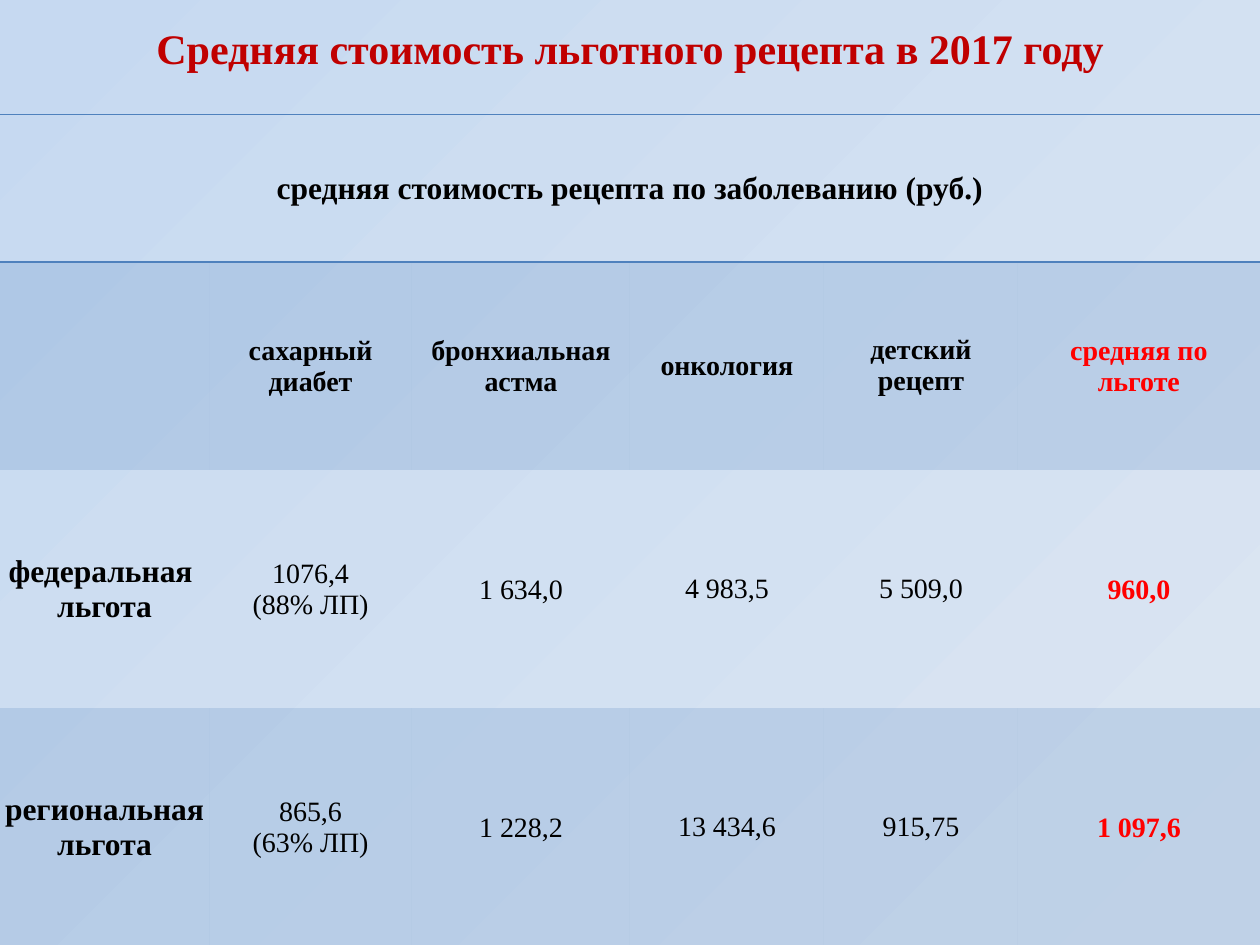
from dataclasses import dataclass

from lxml import etree
from pptx import Presentation
from pptx.dml.color import RGBColor
from pptx.enum import text
from pptx.oxml import ns
from pptx.util import Inches, Pt


@dataclass(frozen=True)
class Theme:
    font: str = "Times New Roman"
    title: str = "C00000"
    body: str = "000000"
    accent: str = "FF0000"
    band: str = "4F81BD"
    glow: str = "DCE6F2"
    backdrop: str = "C6D9F1"
    title_size: int = 24
    label_size: int = 18
    cell_size: int = 16


THEME = Theme()
NO_STYLE = "{2D5ABB26-0587-4C30-8999-92F81FD0307C}"
COLUMN_WIDTHS = (1.66, 1.61, 1.73, 1.54, 1.54, 1.92)
ROW_HEIGHTS = (1.17, 1.65, 1.89, 1.89)
ROWS = (
    ("средняя стоимость рецепта по заболеванию (руб.)", "", "", "", "", ""),
    ("", "сахарный диабет", "бронхиальная астма", "онкология",
     "детский рецепт", "средняя по\nльготе"),
    ("федеральная \nльгота", "1076,4\n(88% ЛП)", "1 634,0", "4 983,5",
     "5 509,0", "960,0"),
    ("региональная льгота", "865,6\n(63% ЛП)", "1 228,2", "13 434,6",
     "915,75", "1 097,6"),
)
WIDE_MARGIN_COLUMNS = (3, 4)


def add_element(parent, tag, **attributes):
    return etree.SubElement(parent, ns.qn(tag), attributes)


def set_alpha(color_element, percent):
    add_element(color_element, "a:alpha", val=str(percent * 1000))


def paint_background(slide):
    fill = slide.background.fill
    fill.gradient()
    for stop, color, position in zip(fill.gradient_stops,
                                     (THEME.glow, THEME.backdrop), (0, 1)):
        stop.color.rgb = RGBColor.from_string(color)
        stop.position = position
    gradient = slide.element.find(".//" + ns.qn("a:gradFill"))
    set_alpha(gradient.find(".//" + ns.qn("a:srgbClr")), 60)
    gradient.remove(gradient.find(ns.qn("a:lin")))
    circle = add_element(gradient, "a:path", path="circle")
    add_element(circle, "a:fillToRect", l="100000", t="100000")


def style_text(frame, size, color, bold):
    for paragraph in frame.paragraphs:
        paragraph.alignment = text.PP_ALIGN.CENTER
        paragraph.font.name = THEME.font
        paragraph.font.size = Pt(size)
        paragraph.font.bold = bold
        paragraph.font.color.rgb = RGBColor.from_string(color)


def add_title(slide, wording):
    title = slide.shapes.add_textbox(0, Inches(0.13), Inches(10), Inches(0.5))
    frame = title.text_frame
    frame.word_wrap = True
    frame.auto_size = text.MSO_AUTO_SIZE.SHAPE_TO_FIT_TEXT
    frame.text = wording
    style_text(frame, THEME.title_size, THEME.title, True)


def add_borders(cell, sides):
    properties = cell._tc.get_or_add_tcPr()
    for index, side in enumerate(sides):
        line = etree.Element(ns.qn(f"a:ln{side}"), w=str(Pt(1)))
        fill = add_element(line, "a:solidFill")
        add_element(fill, "a:srgbClr", val=THEME.band)
        properties.insert(index, line)


def fill_cell(cell, banded):
    if not banded:
        cell.fill.background()
        return
    cell.fill.solid()
    cell.fill.fore_color.rgb = RGBColor.from_string(THEME.band)
    set_alpha(cell._tc.tcPr.find(".//" + ns.qn("a:srgbClr")), 20)


def write_cell(cell, wording, row, column):
    cell.text = wording
    cell.vertical_anchor = text.MSO_ANCHOR.MIDDLE
    if column not in WIDE_MARGIN_COLUMNS:
        cell.margin_left = cell.margin_right = cell.margin_top = Inches(0.01)
        cell.margin_bottom = 0
    is_label = column == 0
    is_average = column == len(COLUMN_WIDTHS) - 1
    style_text(
        cell.text_frame,
        THEME.label_size if is_label else THEME.cell_size,
        THEME.accent if is_average else THEME.body,
        row < 2 or is_label or is_average,
    )


def add_cost_table(slide):
    frame = slide.shapes.add_table(
        len(ROWS), len(COLUMN_WIDTHS), 0, Inches(0.91),
        Inches(sum(COLUMN_WIDTHS)), Inches(sum(ROW_HEIGHTS)))
    table = frame.table
    table.first_row = table.horz_banding = False
    table._tbl.tblPr.find(ns.qn("a:tableStyleId")).text = NO_STYLE
    for column, width in zip(table.columns, COLUMN_WIDTHS):
        column.width = Inches(width)
    for row, height in zip(table.rows, ROW_HEIGHTS):
        row.height = Inches(height)

    borders = {0: "TB", len(ROWS) - 1: "B"}
    for row, wordings in enumerate(ROWS):
        for column, wording in enumerate(wordings):
            cell = table.cell(row, column)
            write_cell(cell, wording, row, column)
            fill_cell(cell, banded=row % 2 == 1)
            add_borders(cell, borders.get(row, ""))
    table.cell(0, 0).merge(table.cell(0, len(COLUMN_WIDTHS) - 1))


def main():
    presentation = Presentation()
    presentation.slide_width = Inches(10)
    presentation.slide_height = Inches(7.5)
    slide = presentation.slides.add_slide(presentation.slide_layouts[6])
    paint_background(slide)
    add_title(slide, "Средняя стоимость льготного рецепта в 2017 году")
    add_cost_table(slide)
    presentation.save("out.pptx")


if __name__ == "__main__":
    main()
